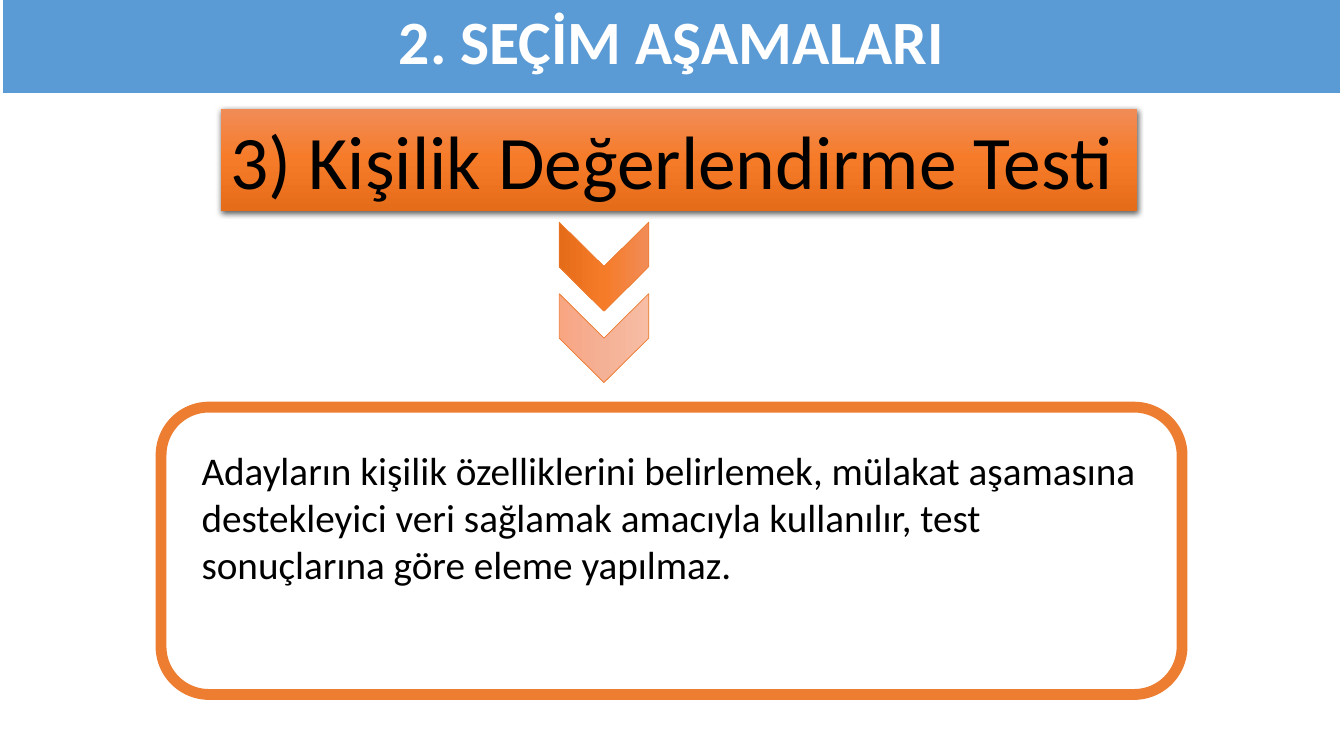
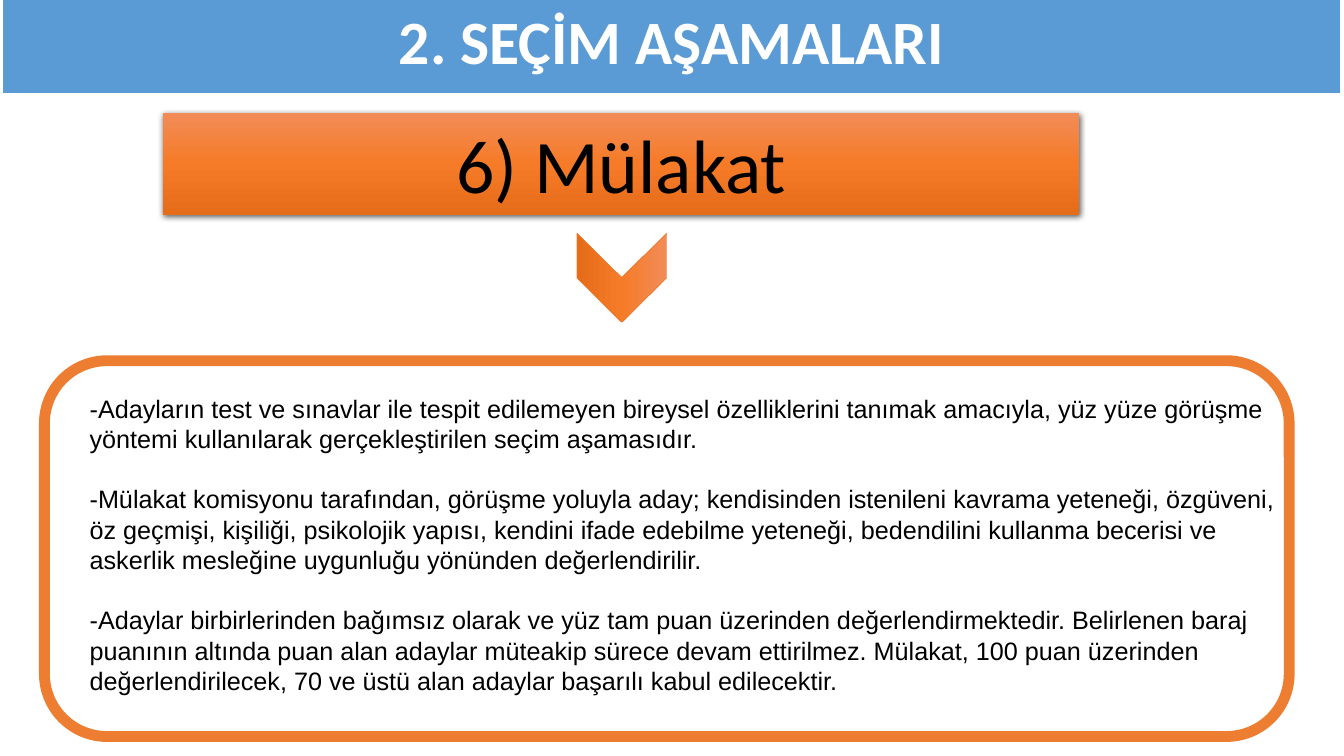
"""Builds two slides on the selection stages."""
from lxml import etree
from pptx import Presentation
from pptx.dml.color import RGBColor
from pptx.enum.shapes import MSO_SHAPE
from pptx.enum.text import MSO_ANCHOR, PP_ALIGN
from pptx.oxml import parse_xml
from pptx.oxml.ns import nsdecls
from pptx.util import Cm, Pt

RECT, ROUND, CHEVRON = MSO_SHAPE.RECTANGLE, MSO_SHAPE.ROUNDED_RECTANGLE, MSO_SHAPE.CHEVRON
LEFT, CENTER = PP_ALIGN.LEFT, PP_ALIGN.CENTER
TOP, MIDDLE = MSO_ANCHOR.TOP, MSO_ANCHOR.MIDDLE

THEME = {
    "white": "FFFFFF", "black": "000000", "blue": "5B9BD5", "orange": "ED7D31",
    "strong": ("F18C57", "F67B28", "E56C19"),
    "pale": ("F7BDA5", "F5B196", "F8A582"),
    "title": {"size": Pt(44), "name": "Calibri", "bold": True},
    "head": {"size": Pt(54), "name": "Calibri"},
    "large": {"size": Pt(28), "name": "Calibri"},
    "small": {"size": Pt(18), "name": "Arial"},
}
TITLE = "2. SEÇİM AŞAMALARI"
BAND = (0.05, -0.13, 33.76, 2.51)
BAR = (23.09, 2.57)
ARROW = (2.24, 2.26)
STEP = 1.8
SLIDES = [
    {
        "head": "3) Kişilik Değerlendirme Testi", "align": LEFT, "bar": (5.56, 2.74),
        "arrow": (14.1, 5.59), "tones": ["strong", "pale"],
        "frame": (4.06, 10.26, 25.73, 7.24),
        "body": (4.83, 11.13, 24.21, 3.84), "font": "large",
        "text": ["Adayların kişilik özelliklerini belirlemek, mülakat aşamasına destekleyici veri sağlamak amacıyla kullanılır, test sonuçlarına göre eleme yapılmaz."],
    },
    {
        "head": "6) Mülakat", "align": CENTER, "bar": (4.11, 2.84),
        "arrow": (14.55, 5.87), "tones": ["strong"],
        "frame": (1.12, 9.09, 31.37, 9.47),
        "body": (2.01, 9.78, 30.48, 7.95), "font": "small",
        "text": [
            "-Adayların test ve sınavlar ile tespit edilemeyen bireysel özelliklerini tanımak amacıyla, yüz yüze görüşme yöntemi kullanılarak gerçekleştirilen seçim aşamasıdır.",
            "-Mülakat komisyonu tarafından, görüşme yoluyla aday; kendisinden istenileni kavrama yeteneği, özgüveni, öz geçmişi, kişiliği, psikolojik yapısı, kendini ifade edebilme yeteneği, bedendilini kullanma becerisi ve askerlik mesleğine uygunluğu yönünden değerlendirilir.",
            "-Adaylar birbirlerinden bağımsız olarak ve yüz tam puan üzerinden değerlendirmektedir. Belirlenen baraj puanının altında puan alan adaylar müteakip sürece devam ettirilmez. Mülakat, 100 puan üzerinden değerlendirilecek, 70 ve üstü alan adaylar başarılı kabul edilecektir.",
        ],
    },
]


def paint(fill, color):
    fill.solid()
    fill.fore_color.rgb = RGBColor.from_string(THEME[color])


def blend(shape, tone):
    stops = "".join(
        f'<a:gs pos="{i * 50000}"><a:srgbClr val="{c}"/></a:gs>'
        for i, c in enumerate(THEME[tone]))
    grad = parse_xml(
        f'<a:gradFill {nsdecls("a")} rotWithShape="1"><a:gsLst>{stops}</a:gsLst>'
        '<a:lin ang="5400000" scaled="0"/></a:gradFill>')
    shape._element.spPr.find("{*}prstGeom").addnext(grad)


def shade(shape):
    glow = shape._element.spPr.find("{*}effectLst")
    drop = etree.SubElement(
        glow, glow.tag.replace("effectLst", "outerShdw"),
        blurRad=str(Pt(4.5)), dist=str(Pt(1.5)), dir="5400000", rotWithShape="0")
    tint = etree.SubElement(
        drop, glow.tag.replace("effectLst", "srgbClr"), val=THEME["black"])
    etree.SubElement(tint, glow.tag.replace("effectLst", "alpha"), val="63000")


def draw(slide, kind, box, fill=None, line=None, width=0):
    shape = slide.shapes.add_shape(kind, *map(Cm, box))
    shape.shadow.inherit = False
    if fill:
        paint(shape.fill, fill)
    if line:
        paint(shape.line.fill, line)
        shape.line.width = Pt(width)
    else:
        shape.line.fill.background()
    return shape


def write(shape, lines, font, color="black", align=LEFT, anchor=TOP, gap=0, pitch=None):
    frame = shape.text_frame
    frame.word_wrap = True
    frame.vertical_anchor = anchor
    for i, line in enumerate(lines):
        para = frame.add_paragraph() if i else frame.paragraphs[0]
        form = {"alignment": align, "line_spacing": pitch, "space_before": Pt(gap if i else 0)}
        for key, value in form.items():
            setattr(para, key, value)
        run = para.add_run()
        run.text = line
        for key, value in THEME[font].items():
            setattr(run.font, key, value)
        run.font.color.rgb = RGBColor.from_string(THEME[color])


def build(deck, data):
    slide = deck.slides.add_slide(deck.slide_layouts[6])
    draw(slide, ROUND, data["frame"], "white", "orange", 7.75)
    band = draw(slide, RECT, BAND, "blue", "white", 1.5)
    write(band, [TITLE], "title", "white", CENTER, MIDDLE, pitch=0.9)
    left, top = data["arrow"]
    for i, tone in reversed(list(enumerate(data["tones"]))):
        arrow = draw(slide, CHEVRON, (left, top + i * STEP, *ARROW), line="orange", width=0.5)
        arrow.rotation = 90
        blend(arrow, tone)
    bar = draw(slide, RECT, data["bar"] + BAR)
    blend(bar, "strong")
    shade(bar)
    write(bar, [data["head"]], "head", align=data["align"])
    body = slide.shapes.add_textbox(*map(Cm, data["body"]))
    write(body, data["text"], data["font"], gap=21.6)


def main():
    deck = Presentation()
    deck.slide_width, deck.slide_height = Cm(33.87), Cm(19.05)
    for data in SLIDES:
        build(deck, data)
    deck.save("out.pptx")


if __name__ == "__main__":
    main()
